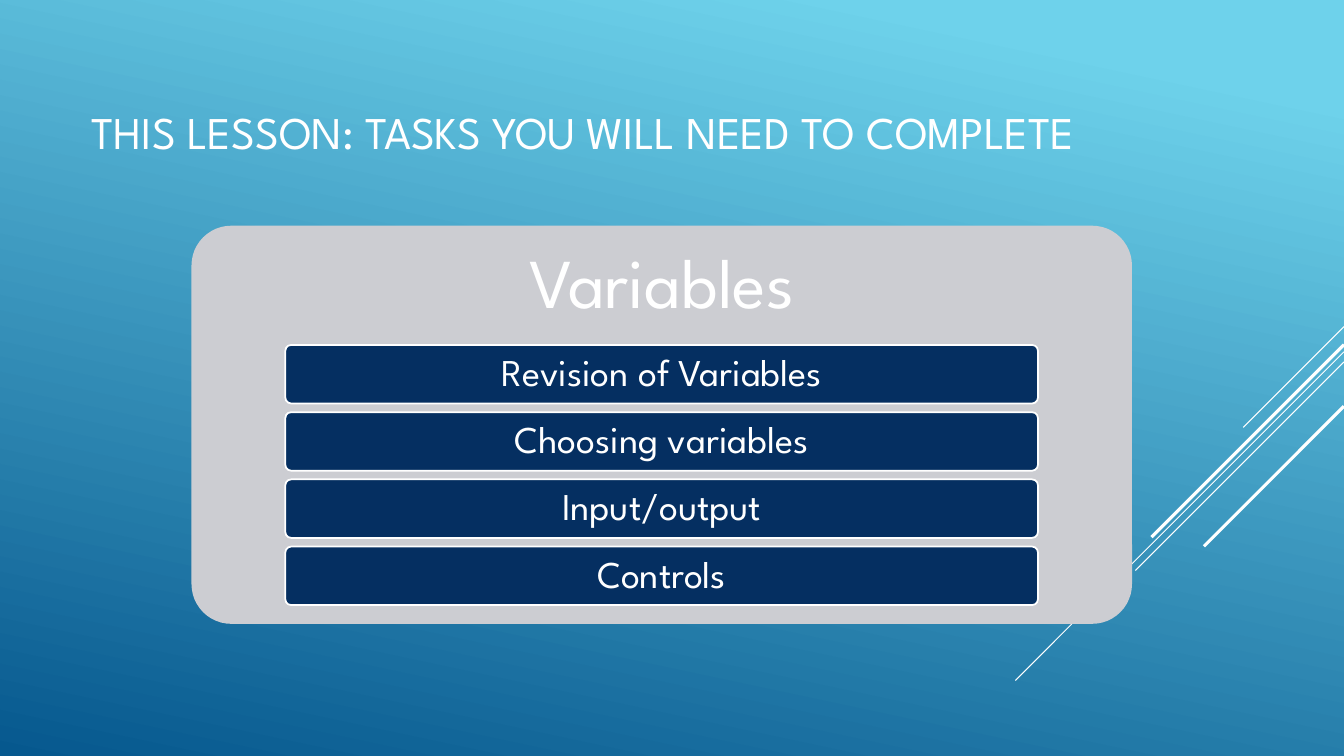
from lxml import etree
from pptx import Presentation
from pptx.dml.color import RGBColor
from pptx.enum import shapes, text
from pptx.oxml.ns import qn
from pptx.util import Pt

FONT = "League Spartan"
WHITE = RGBColor(0xFF, 0xFF, 0xFF)
SKY = RGBColor(0x6E, 0xD2, 0xEB)
OCEAN = RGBColor(0x06, 0x58, 0x8E)
PANEL = RGBColor(0xCC, 0xCD, 0xD2)
NAVY = RGBColor(0x05, 0x2F, 0x61)

SLIDE_W, SLIDE_H = 960, 540
TASKS = ["Revision of Variables", "Choosing variables", "Input/output", "Controls"]
BAR_TOP, BAR_PITCH = 246.4, 48

# Height at the right edge, horizontal run, line width
STRIPES = [
    (233.3, 72, 0.75),
    (251.3, 234.7, 0.75),
    (258.5, 149, 0.75),
    (246.2, 137.5, 2.25),
    (290.2, 100, 2.25),
]


def set_background(s):
    fill = s.background.fill
    fill.gradient()
    fill.gradient_angle = 360 - 102
    for stop, position, color in zip(fill.gradient_stops, (0.1, 1), (SKY, OCEAN)):
        stop.position = position
        stop.color.rgb = color


def add_stripe(s, top, run, width):
    """Draw a 45-degree line down and left from the right edge."""
    line = s.shapes.add_connector(
        shapes.MSO_CONNECTOR.STRAIGHT,
        Pt(SLIDE_W), Pt(top), Pt(SLIDE_W - run), Pt(top + run))
    line.line.color.rgb = WHITE
    line.line.width = Pt(width)
    etree.SubElement(line._element.spPr, qn("a:effectLst"))


def write(sp, words, size, align, margins, spacing=1.0):
    tf = sp.text_frame
    tf.word_wrap = True
    tf.vertical_anchor = text.MSO_ANCHOR.MIDDLE
    tf.margin_left, tf.margin_top, tf.margin_right, tf.margin_bottom = map(Pt, margins)
    p = tf.paragraphs[0]
    p.text = words
    p.alignment = align
    p.line_spacing = spacing
    p.font.name = FONT
    p.font.size = Pt(size)
    p.font.color.rgb = WHITE


def add_label(s, box, *args):
    write(s.shapes.add_textbox(*map(Pt, box)), *args)


def add_rounded(s, box, color):
    sp = s.shapes.add_shape(shapes.MSO_SHAPE.ROUNDED_RECTANGLE, *map(Pt, box))
    sp.adjustments[0] = 0.1
    sp.shadow.inherit = False
    sp.fill.solid()
    sp.fill.fore_color.rgb = color
    sp.line.fill.background()
    return sp


def add_task_bar(s, top, words):
    sp = add_rounded(s, (203.8, top, 537.6, 41.8), NAVY)
    sp.line.color.rgb = WHITE
    sp.line.width = Pt(1.25)
    write(sp, words, 27, text.PP_ALIGN.CENTER, (5, 4, 5, 4), 0.9)


def main():
    prs = Presentation()
    prs.slide_width, prs.slide_height = Pt(SLIDE_W), Pt(SLIDE_H)
    s = prs.slides.add_slide(prs.slide_layouts[6])

    # Backdrop
    set_background(s)
    for stripe in STRIPES:
        add_stripe(s, *stripe)

    # Title, raised by a deep bottom margin
    add_label(s, (58.3, 50.4, 797.8, 118.8),
              "THIS LESSON: TASKS YOU WILL NEED TO COMPLETE",
              32.4, text.PP_ALIGN.LEFT, (7.2, 3.6, 7.2, 36))

    # Panel and its heading
    add_rounded(s, (136.8, 161.2, 671.8, 284.4), PANEL)
    add_label(s, (136.8, 161.2, 671.8, 85.4), "Variables",
              50, text.PP_ALIGN.CENTER, (15, 15, 15, 15), 0.9)

    # Task list
    for i, task in enumerate(TASKS):
        add_task_bar(s, BAR_TOP + i * BAR_PITCH, task)

    prs.save("out.pptx")


if __name__ == "__main__":
    main()
